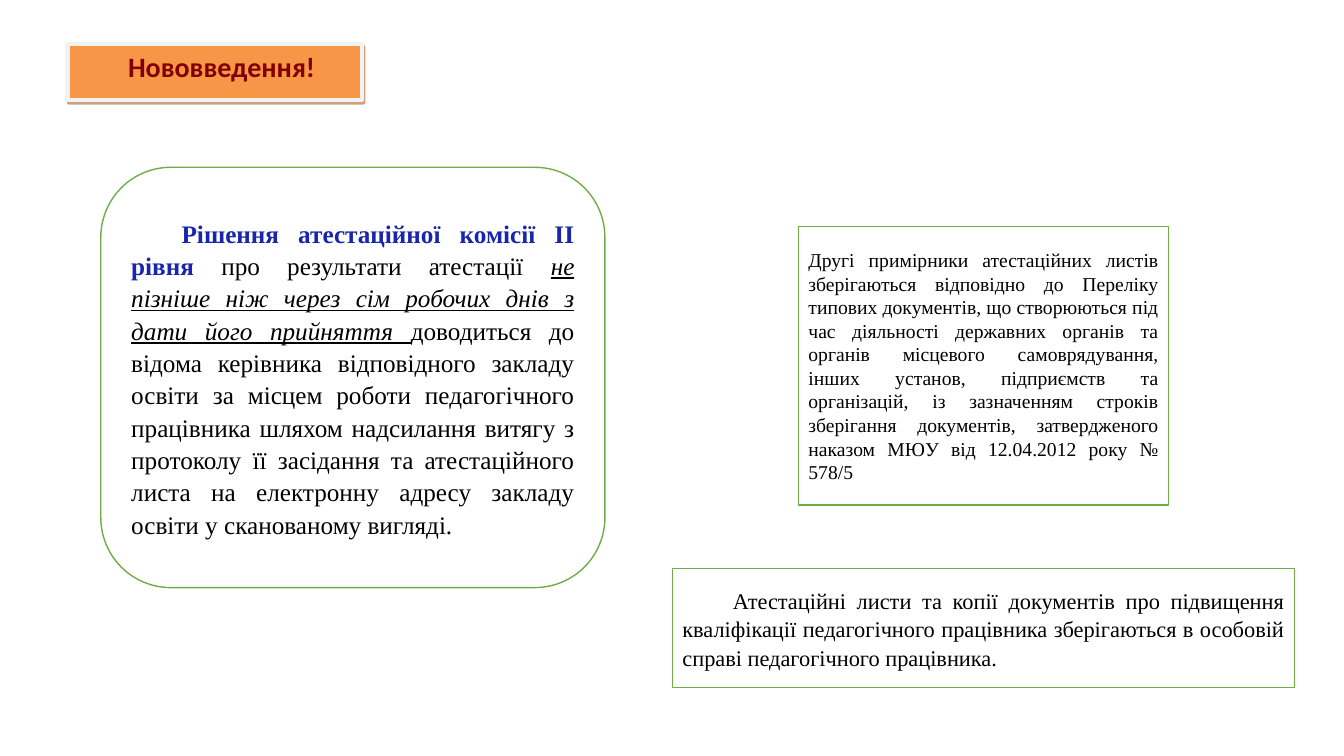
from dataclasses import dataclass

from lxml import etree
from pptx import Presentation
from pptx.dml.color import RGBColor
from pptx.enum import shapes, text
from pptx.oxml import ns
from pptx.util import Inches, Pt


@dataclass(frozen=True)
class Theme:
    serif: str = "Times New Roman"
    sans: str = "Calibri"
    paper: str = "FFFFFF"
    ink: str = "000000"
    green: str = "70AD47"
    blue: str = "1826AC"
    maroon: str = "800000"
    orange: str = "F79646"
    pale: str = "F2F2F2"
    brown: str = "974706"
    heading: int = 20
    lead: int = 18
    note: int = 16
    detail: int = 14


def write(para, words, *, size, font, color, bold=False, italic=False, underline=False):
    """Append one formatted span to a paragraph."""
    span = para.add_run()
    span.text = words
    span.font.name = font
    span.font.size = Pt(size)
    span.font.color.rgb = RGBColor.from_string(color)
    span.font.bold = bold
    span.font.italic = italic
    span.font.underline = underline


def element(parent, tag, **attributes):
    """Append one DrawingML element."""
    return etree.SubElement(parent, ns.qn(tag), attributes)


class SlideBuilder:
    def __init__(self, page, theme):
        self.page = page
        self.theme = theme

    def paint(self, box, fill, line, width):
        box.fill.solid()
        box.fill.fore_color.rgb = RGBColor.from_string(fill)
        box.line.color.rgb = RGBColor.from_string(line)
        box.line.width = Pt(width)

    def frame(self, box, anchor):
        frame = box.text_frame
        frame.word_wrap = True
        frame.auto_size = text.MSO_AUTO_SIZE.NONE
        frame.vertical_anchor = anchor
        return frame.paragraphs[0]

    def banner(self, words, left, top, width, height):
        """Turn the title placeholder into a rounded badge with a hard shadow."""
        theme = self.theme
        box = self.page.shapes.title
        box.left, box.top = Inches(left), Inches(top)
        box.width, box.height = Inches(width), Inches(height)
        properties = box.element.spPr
        outline = element(properties, "a:prstGeom", prst="roundRect")
        element(outline, "a:avLst")
        self.paint(box, theme.orange, theme.pale, 3)
        effects = element(properties, "a:effectLst")
        shadow = element(effects, "a:outerShdw", blurRad="0", dist=str(Pt(2.2)),
                         dir=str(63 * 60000), algn="ctr", rotWithShape="0")
        tint = element(shadow, "a:srgbClr", val=theme.brown)
        element(tint, "a:alpha", val="50000")

        para = self.frame(box, text.MSO_ANCHOR.TOP)
        para.alignment = text.PP_ALIGN.LEFT
        para.space_after = Pt(10)
        para._p.get_or_add_pPr().set("marL", str(Inches(0.5)))
        write(para, words, size=theme.heading, font=theme.sans,
              color=theme.maroon, bold=True)

    def card(self, spans, left, top, width, height, *, size, rounded=False,
             indent=0, spacing=1.0):
        """Add a green-outlined card; spans are (words, format overrides)."""
        theme = self.theme
        kind = shapes.MSO_SHAPE.ROUNDED_RECTANGLE if rounded else shapes.MSO_SHAPE.RECTANGLE
        box = self.page.shapes.add_shape(
            kind, Inches(left), Inches(top), Inches(width), Inches(height))
        box.shadow.inherit = False
        self.paint(box, theme.paper, theme.green, 1)
        para = self.frame(box, text.MSO_ANCHOR.MIDDLE)
        para.alignment = text.PP_ALIGN.JUSTIFY
        para.line_spacing = spacing
        para._p.get_or_add_pPr().set("indent", str(Inches(indent)))
        for words, changes in spans:
            look = {"size": size, "font": theme.serif, "color": theme.ink, **changes}
            write(para, words, **look)


def main():
    theme = Theme()
    deck = Presentation()
    deck.slide_width, deck.slide_height = Inches(13.33), Inches(7.5)
    builder = SlideBuilder(deck.slides.add_slide(deck.slide_layouts[5]), theme)

    # Heading badge
    builder.banner("Нововведення!", 0.67, 0.44, 2.92, 0.55)

    # Commission decision
    builder.card([
        ("Рішення атестаційної комісії II рівня ", {"color": theme.blue, "bold": True}),
        ("про результати атестації ", {}),
        ("не пізніше ніж через сім робочих днів з дати його прийняття ",
         {"italic": True, "underline": True}),
        ("доводиться до відома керівника відповідного закладу освіти за місцем роботи "
         "педагогічного працівника шляхом надсилання витягу з протоколу її засідання та "
         "атестаційного листа на електронну адресу закладу освіти у сканованому вигляді.", {}),
    ], 1, 1.66, 5, 4.17, size=theme.lead, rounded=True, indent=0.5, spacing=1.07)

    # Storage of second copies
    builder.card([
        ("Другі примірники атестаційних листів зберігаються відповідно до Переліку типових "
         "документів, що створюються під час діяльності державних органів та органів "
         "місцевого самоврядування, інших установ, підприємств та організацій, із "
         "зазначенням строків зберігання документів, затвердженого наказом МЮУ від "
         "12.04.2012 року № 578/5", {}),
    ], 7.92, 2.25, 3.67, 2.76, size=theme.detail)

    # Personal file
    builder.card([
        ("Атестаційні листи та копії документів про підвищення кваліфікації педагогічного "
         "працівника зберігаються в особовій справі педагогічного працівника.", {}),
    ], 6.67, 5.64, 6.17, 1.18, size=theme.note, indent=0.5, spacing=1.07)

    deck.save("out.pptx")


if __name__ == "__main__":
    main()
